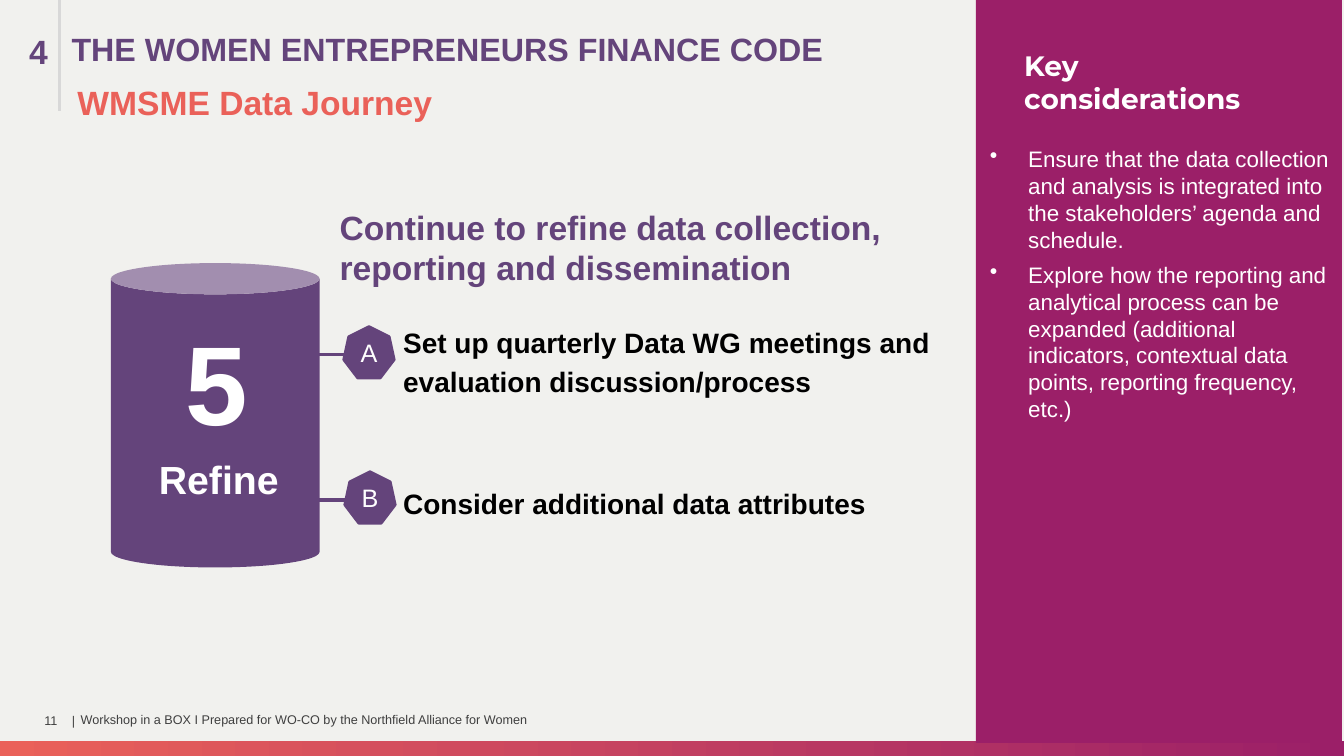
import pptx
import pptx.dml.color
import pptx.enum.dml
import pptx.enum.shapes
import pptx.enum.text
import pptx.oxml
import pptx.oxml.ns
import pptx.util

PX = 9144  # EMU in one px, 100 px to the inch
COLORS = {
    "paper": "F1F1EE", "purple": "64447B", "magenta": "9B1F68",
    "coral": "EA6159", "rule": "D8D8D8", "footer": "3F3F3F",
    "black": "000000", "white": "FFFFFF",
}
SHAPE = pptx.enum.shapes.MSO_SHAPE
ALIGN = pptx.enum.text.PP_ALIGN
ANCHOR = pptx.enum.text.MSO_ANCHOR
INSETS = (10, 5, 10, 5)


def rgb(name):
    return pptx.dml.color.RGBColor.from_string(COLORS[name])


def px(*lengths):
    return [length * PX for length in lengths]


def add_bullet(paragraph, color, indent):
    props = paragraph._p.get_or_add_pPr()
    props.set("marL", str(indent * PX))
    props.set("indent", str(-indent * PX))
    namespace = pptx.oxml.ns.nsdecls("a")
    props.append(pptx.oxml.parse_xml(
        f'<a:buClr {namespace}><a:srgbClr val="{COLORS[color]}"/></a:buClr>'))
    props.append(pptx.oxml.parse_xml(f'<a:buChar {namespace} char="•"/>'))


def write(frame, *lines, size, color, bold=False, font="Arial", align=ALIGN.LEFT,
          anchor=ANCHOR.TOP, insets=INSETS, spacing=1.0, gap=0, bullet_indent=0):
    """Fill a text frame, one paragraph a line, with gap points between them."""
    frame.word_wrap = True
    frame.auto_size = pptx.enum.text.MSO_AUTO_SIZE.NONE
    frame.vertical_anchor = anchor
    (frame.margin_left, frame.margin_top,
     frame.margin_right, frame.margin_bottom) = px(*insets)
    for index, line in enumerate(lines):
        paragraph = frame.add_paragraph() if index else frame.paragraphs[0]
        paragraph.alignment = align
        paragraph.line_spacing = spacing
        paragraph.space_before = pptx.util.Pt(gap if index else 0)
        if bullet_indent:
            add_bullet(paragraph, color, bullet_indent)
        run = paragraph.add_run()
        run.text = line
        run.font.name = font
        run.font.size = pptx.util.Pt(size)
        run.font.bold = bold
        run.font.color.rgb = rgb(color)


class Page:
    def __init__(self, deck):
        self.slide = deck.slides.add_slide(deck.slide_layouts[5])
        background = self.slide.background.fill
        background.solid()
        background.fore_color.rgb = rgb("paper")

    def title(self, box, text, **style):
        title = self.slide.shapes.title
        title.left, title.top, title.width, title.height = px(*box)
        write(title.text_frame, text, **style)

    def text(self, box, *lines, **style):
        label = self.slide.shapes.add_textbox(*px(*box))
        write(label.text_frame, *lines, **style)

    def shape(self, kind, box, fill, outline=0):
        shape = self.slide.shapes.add_shape(kind, *px(*box))
        shape.shadow.inherit = False
        shape.fill.solid()
        shape.fill.fore_color.rgb = rgb(fill)
        if outline:
            shape.line.color.rgb = rgb(fill)
            shape.line.width = pptx.util.Pt(outline)
        else:
            shape.line.fill.background()
        return shape

    def gradient_bar(self, box, left_color, right_color):
        bar = self.shape(SHAPE.RECTANGLE, box, left_color)
        bar.fill.gradient()
        bar.fill.gradient_angle = 0
        for stop, color in zip(bar.fill.gradient_stops, (left_color, right_color)):
            stop.color.rgb = rgb(color)

    def line(self, start, end, color):
        line = self.slide.shapes.add_connector(
            pptx.enum.shapes.MSO_CONNECTOR.STRAIGHT, *px(*start, *end))
        line.line.color.rgb = rgb(color)
        line.line.width = pptx.util.Pt(2.25)
        line._element.spPr.append(pptx.oxml.parse_xml(
            f'<a:effectLst {pptx.oxml.ns.nsdecls("a")}/>'))

    def step_marker(self, letter, left, top):
        """Draw a lettered heptagon and the line that ties it to the cylinder."""
        self.line((202, top + 28), (left + 1, top + 28), "purple")
        marker = self.shape(SHAPE.HEPTAGON, (left, top, 50, 51), "purple", outline=2)
        write(marker.text_frame, letter, size=18, color="white",
              align=ALIGN.CENTER, anchor=ANCHOR.MIDDLE)


def main():
    deck = pptx.Presentation()
    deck.slide_width, deck.slide_height = px(1333, 750)
    page = Page(deck)

    page.gradient_bar((0, 735, 1333, 15), "coral", "magenta")
    page.shape(SHAPE.RECTANGLE, (968, 0, 363, 737), "magenta")
    page.text((1006, 43, 264, 77), "Key considerations",
              size=20, color="white", bold=True, font="Montserrat")
    page.text((972, 139, 356, 342),
              "Ensure that the data collection and analysis is integrated into "
              "the stakeholders’ agenda and schedule.",
              "Explore how the reporting and analytical process can be expanded "
              "(additional indicators, contextual data points, reporting "
              "frequency, etc.)",
              size=16, color="white", gap=6, bullet_indent=38)

    page.step_marker("A", 341, 324)
    page.step_marker("B", 342, 468)
    page.text((390, 313, 566, 205),
              "Set up quarterly Data WG meetings and evaluation discussion/process",
              "Consider additional data attributes",
              size=20, color="black", bold=True, spacing=1.15, gap=60)
    page.text((327, 200, 627, 91),
              "Continue to refine data collection, reporting and dissemination",
              size=24, color="purple", bold=True)

    cylinder = page.shape(SHAPE.CAN, (110, 261, 207, 302), "purple")
    cylinder.adjustments[0] = 0.15
    page.text((174, 306, 90, 145), "5", size=80, color="white", bold=True)
    page.text((120, 451, 194, 48), "Refine", size=28, color="white", bold=True,
              align=ALIGN.CENTER, anchor=ANCHOR.MIDDLE)

    page.title((42, 24, 920, 50), "THE WOMEN ENTREPRENEURS FINANCE CODE",
               size=23, color="purple", bold=True, insets=(29, 5, 10, 5))
    page.text((67, 76, 890, 50), "WMSME Data Journey",
              size=24, color="coral", bold=True)
    page.text((0, 26, 90, 50), "4", size=24, color="purple", bold=True,
              insets=(29, 5, 10, 5))
    page.line((59, 0), (59, 110), "rule")

    footer = dict(size=9, color="footer", anchor=ANCHOR.MIDDLE, insets=(0, 0, 0, 0))
    page.text((44, 695, 22, 40), "11", **footer)
    page.text((68, 695, 10, 40), "|", align=ALIGN.CENTER, **footer)
    page.text((80, 694, 571, 40),
              "Workshop in a BOX I Prepared for WO-CO by the Northfield Alliance for Women",
              **footer)

    deck.save("out.pptx")


if __name__ == "__main__":
    main()
